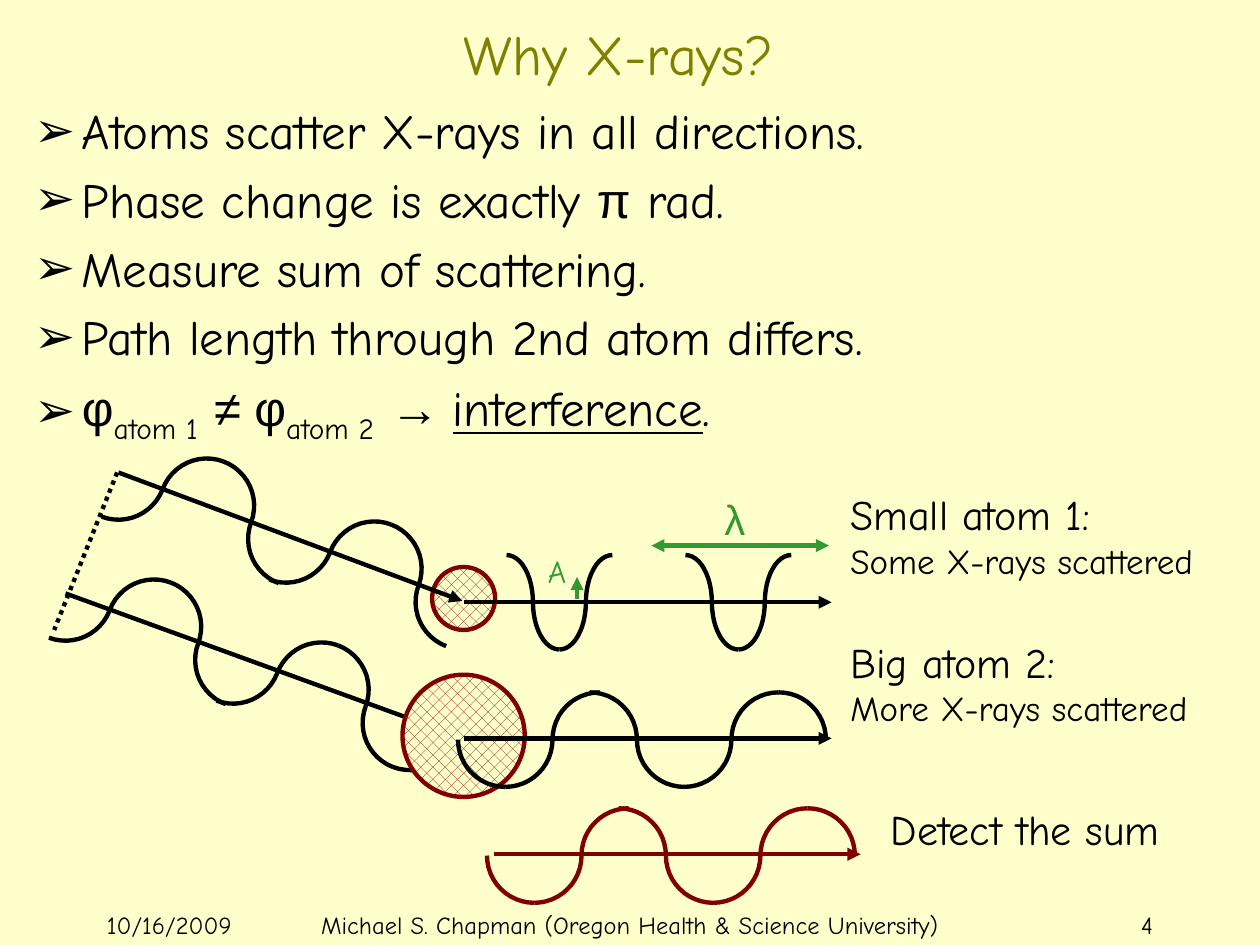
import math

import pptx
import pptx.dml.color
import pptx.enum.dml
import pptx.enum.shapes
import pptx.enum.text
import pptx.oxml
import pptx.oxml.ns
import pptx.util

Inches = pptx.util.Inches
Pt = pptx.util.Pt
RGB = pptx.dml.color.RGBColor
ALIGN = pptx.enum.text.PP_ALIGN
ANCHOR = pptx.enum.text.MSO_ANCHOR
DASH = pptx.enum.dml.MSO_LINE

CREAM = RGB(0xFF, 0xFF, 0xCC)
BLACK = RGB(0, 0, 0)
OLIVE = RGB(0x80, 0x80, 0)
MAROON = RGB(0x80, 0, 0)
GREEN = RGB(0x33, 0x99, 0x33)
HAND = "Comic Neue"
PLAIN = "Arial"

QUARTER = 0.375   # a quarter of a wavelength, and the amplitude
LAP = 0.08        # the second wavelength starts this much early
TILT = 20.6       # slope of the incoming rays, degrees


def add_tag(parent, tag, **attrs):
    node = pptx.oxml.parse_xml(
        f'<{tag} xmlns:a="{pptx.oxml.ns.nsuri("a")}"/>')
    for key, value in attrs.items():
        node.set(key, value)
    parent.append(node)


def add_run(par, text, size=28, font=HAND, color=BLACK, sub=False, under=False):
    run = par.add_run()
    run.text = text
    run.font.size = Pt(size)
    run.font.name = font
    run.font.color.rgb = color
    if under:
        run.font.underline = True
    if sub:
        run.font._element.set("baseline", "-25000")


class Sketch:
    def __init__(self, deck, width=2.5):
        self.slide = deck.slides.add_slide(deck.slide_layouts[1])
        self.shapes = self.slide.shapes
        self.width = Pt(width)
        fill = self.slide.background.fill
        fill.solid()
        fill.fore_color.rgb = CREAM

    def place(self, shape, x, y, w, h):
        shape.left, shape.top = Inches(x), Inches(y)
        shape.width, shape.height = Inches(w), Inches(h)

    def stroke(self, shape, color):
        shape.line.color.rgb = color
        shape.line.width = self.width

    def title(self, text, box):
        shape = self.shapes.title
        self.place(shape, *box)
        frame = shape.text_frame
        frame.auto_size = pptx.enum.text.MSO_AUTO_SIZE.NONE
        frame.vertical_anchor = ANCHOR.MIDDLE
        par = frame.paragraphs[0]
        par.alignment = ALIGN.CENTER
        add_run(par, text, size=32, color=OLIVE)

    def points(self, items, box):
        shape = self.slide.placeholders[1]
        self.place(shape, *box)
        frame = shape.text_frame
        frame.auto_size = pptx.enum.text.MSO_AUTO_SIZE.NONE
        for i, runs in enumerate(items):
            par = frame.add_paragraph() if i else frame.paragraphs[0]
            props = par._p.get_or_add_pPr()
            props.set("marL", str(Inches(0.38)))
            props.set("indent", str(-Inches(0.38)))
            add_tag(props, "a:buFont", typeface=PLAIN)
            add_tag(props, "a:buChar", char="➢")
            for text, style in runs:
                add_run(par, text, **style)

    def label(self, lines, box, align=ALIGN.LEFT, wrap=False):
        frame = self.shapes.add_textbox(*map(Inches, box)).text_frame
        frame.word_wrap = wrap
        for i, (text, style) in enumerate(lines):
            par = frame.add_paragraph() if i else frame.paragraphs[0]
            par.alignment = align
            add_run(par, text, **style)

    def line(self, start, end, color=BLACK, head=False, tail=True, dash=None):
        kind = pptx.enum.shapes.MSO_CONNECTOR.STRAIGHT
        link = self.shapes.add_connector(kind, *map(Inches, start + end))
        self.stroke(link, color)
        if dash:
            link.line.dash_style = dash
        edge = link.line._get_or_add_ln()
        if head:
            add_tag(edge, "a:headEnd", type="triangle")
        if tail:
            add_tag(edge, "a:tailEnd", type="triangle")
        add_tag(link._element.spPr, "a:effectLst")

    def atom(self, x, y, size):
        oval = self.shapes.add_shape(
            pptx.enum.shapes.MSO_SHAPE.OVAL, Inches(x - size / 2),
            Inches(y - size / 2), Inches(size), Inches(size))
        oval.shadow.inherit = False
        oval.fill.patterned()
        oval.fill.pattern = pptx.enum.dml.MSO_PATTERN.PERCENT_30
        oval.fill.fore_color.rgb = MAROON
        oval.fill.back_color.rgb = CREAM
        self.stroke(oval, MAROON)

    def wave(self, x, y, parts, color=BLACK, tilt=0, side=-1, step=QUARTER):
        """Quarter arcs along an axis from (x, y); side 1 starts in a trough."""
        cos, sin = math.cos(math.radians(tilt)), math.sin(math.radians(tilt))
        for part in parts:
            odd = part % 2
            shift = LAP if part > 3 else 0
            peak = (part + odd) * step - shift
            cross = (part + 1 - odd) * step - shift
            sign = side * (-1) ** ((part + odd) // 2)
            dots = []
            for i in range(13):
                turn = math.pi / 2 * i / 12
                along = peak + (cross - peak) * math.cos(turn)
                off = sign * QUARTER * math.sin(turn)
                dots.append((Inches(x + along * cos - off * sin),
                             Inches(y + along * sin + off * cos)))
            path = self.shapes.build_freeform(*dots[0], scale=1.0)
            path.add_line_segments(dots[1:], close=False)
            arc = path.convert_to_shape()
            arc.shadow.inherit = False
            arc.fill.background()
            self.stroke(arc, color)


def main():
    deck = pptx.Presentation()
    deck.slide_width, deck.slide_height = Inches(10), Inches(7.5)
    art = Sketch(deck)

    # Title and list
    art.title("Why X-rays?", (0, 0.17, 9.82, 0.5))
    greek, small = {"font": PLAIN}, {"size": 29, "sub": True}
    art.points([
        [("Atoms scatter X-rays in all directions.", {})],
        [("Phase change is exactly ", {}), ("π", greek), (" rad.", {})],
        [("Measure sum of scattering.", {})],
        [("Path length through 2nd atom differs.", {})],
        [("φ", greek), ("atom 1", small), (" ", {}), ("≠ φ", greek),
         ("atom 2", small), (" ", {}), ("→ ", greek),
         ("interference", {"under": True}), (".", {})],
    ], (0.17, 0.75, 9.67, 6.33))

    # Footer
    for text, x, w, align in [
            ("10/16/2009", 0.75, 1.42, ALIGN.LEFT),
            ("Michael S. Chapman (Oregon Health & Science University)",
             2.25, 5.5, ALIGN.CENTER),
            ("4", 7.92, 1.33, ALIGN.RIGHT)]:
        art.label([(text, {"size": 14})], (x, 7.17, w, 0.17), align, wrap=True)

    # Wave front and the ray to the big atom
    art.line((0.93, 3.75), (0.43, 5), tail=False, dash=DASH.ROUND_DOT)
    art.wave(0.52, 4.71, range(9), tilt=TILT, side=1)
    art.line((0.52, 4.71), (3.6, 5.83))

    # Sum of both waves
    art.wave(3.49, 6.79, range(1, 9), color=MAROON)
    art.line((3.92, 6.78), (6.83, 6.78), color=MAROON)

    # Small atom with its rays
    art.atom(3.68, 4.75, 0.5)
    for x in (4.02, 5.44):
        art.wave(x, 4.78, range(4), step=0.21)
    art.line((3.68, 4.78), (6.6, 4.78))
    art.wave(0.94, 3.75, range(8), tilt=TILT, side=1)
    art.line((0.94, 3.75), (3.67, 4.77))

    # Big atom with its outgoing ray
    art.atom(3.68, 5.84, 0.97)
    art.wave(3.26, 5.87, range(1, 9))
    art.line((3.68, 5.86), (6.6, 5.86))

    # Captions
    big, less = {"size": 24}, {"size": 20}
    art.label([("Small atom 1:", big), ("Some X-rays scattered", less)],
              (6.65, 3.83, 3.23, 0.83))
    art.label([("Big atom 2:", big), ("More X-rays scattered", less)],
              (6.65, 5, 3.2, 0.83))
    art.label([("Detect the sum", big)], (6.97, 6.33, 2.61, 0.5))

    # Wavelength and amplitude marks
    art.line((5.17, 4.33), (6.58, 4.33), color=GREEN, head=True)
    art.line((4.58, 4.75), (4.58, 4.58), color=GREEN)
    art.label([("A", {"size": 18, "color": GREEN})], (4.25, 4.33, 0.38, 0.4))
    art.label([("λ", {"size": 24, "font": PLAIN, "color": GREEN})],
              (5.65, 3.87, 0.38, 0.5))

    deck.save("out.pptx")


if __name__ == "__main__":
    main()
